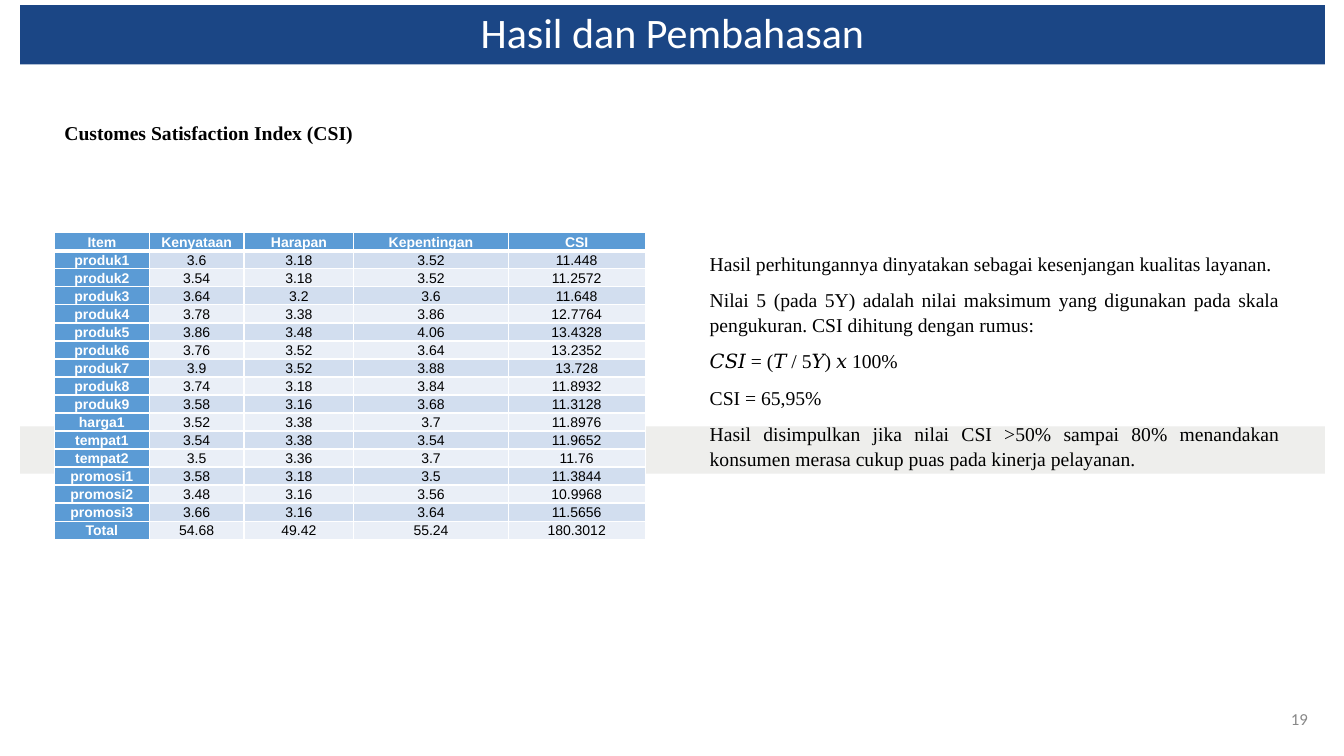
"""Build the slide on the Customer Satisfaction Index results."""
from dataclasses import dataclass

from lxml.etree import SubElement
from pptx import Presentation
from pptx.dml.color import RGBColor
from pptx.enum.shapes import MSO_SHAPE
from pptx.enum.text import MSO_ANCHOR, PP_ALIGN
from pptx.oxml.ns import qn
from pptx.shapes.autoshape import Shape
from pptx.slide import Slide
from pptx.table import _Cell
from pptx.text.text import TextFrame
from pptx.util import Emu, Pt

PX = 9144
WHITE, BLACK, GREY = "FFFFFF", "000000", "888888"
NAVY, PALE_GREY, BLUE = "1B4685", "EEEEEC", "5B9BD5"
BAND_FILLS = ("EAEFF7", "D2DEEF")
SERIF, MATH = "Times New Roman", "Cambria"


@dataclass(frozen=True)
class Box:
    left: int
    top: int
    width: int
    height: int

    def emu(self) -> tuple[Emu, Emu, Emu, Emu]:
        return px(self.left), px(self.top), px(self.width), px(self.height)


@dataclass(frozen=True)
class Run:
    text: str
    font: str = SERIF


@dataclass(frozen=True)
class Band:
    box: Box
    fill: str


@dataclass(frozen=True)
class Column:
    heading: str
    width: int
    values: tuple[str, ...]


TITLE_BAND = Band(Box(20, 5, 1294, 59), NAVY)
LOWER_BAND = Band(Box(20, 423, 1294, 47), PALE_GREY)
PAGE_NUMBER = Box(1250, 693, 57, 40)
SUBHEADING = Box(54, 113, 667, 34)
EXPLANATION = Box(694, 243, 585, 230)
TABLE_LEFT, TABLE_TOP, ROW_HEIGHT = 54, 231, 17

ITEMS = (*(f"produk{n}" for n in range(1, 10)), "harga1", "tempat1", "tempat2",
         *(f"promosi{n}" for n in range(1, 4)), "Total")
COLUMNS = (
    Column("Item", 94, ITEMS),
    Column("Kenyataan", 94, (
        "3.6", "3.54", "3.64", "3.78", "3.86", "3.76", "3.9", "3.74",
        "3.58", "3.52", "3.54", "3.5", "3.58", "3.48", "3.66", "54.68")),
    Column("Harapan", 109, (
        "3.18", "3.18", "3.2", "3.38", "3.48", "3.52", "3.52", "3.18",
        "3.16", "3.38", "3.38", "3.36", "3.18", "3.16", "3.16", "49.42")),
    Column("Kepentingan", 153, (
        "3.52", "3.52", "3.6", "3.86", "4.06", "3.64", "3.88", "3.84",
        "3.68", "3.7", "3.54", "3.7", "3.5", "3.56", "3.64", "55.24")),
    Column("CSI", 136, (
        "11.448", "11.2572", "11.648", "12.7764", "13.4328", "13.2352",
        "13.728", "11.8932", "11.3128", "11.8976", "11.9652", "11.76",
        "11.3844", "10.9968", "11.5656", "180.3012")),
)
PARAGRAPHS = (
    (Run("Hasil perhitungannya dinyatakan sebagai kesenjangan kualitas layanan."),),
    (Run("Nilai 5 (pada 5Y) adalah nilai maksimum yang digunakan pada skala "
         "pengukuran. CSI dihitung dengan rumus:"),),
    (Run("𝐶𝑆𝐼", MATH), Run(" = ("), Run("𝑇", MATH), Run(" / 5"),
     Run("𝑌", MATH), Run(") "), Run("𝑥", MATH), Run(" 100%")),
    (Run("CSI = 65,95%"),),
    (Run("Hasil disimpulkan jika nilai CSI >50% sampai 80% menandakan "
         "konsumen merasa cukup puas pada kinerja pelayanan."),),
)


def px(length: int) -> Emu:
    return Emu(length * PX)


def rgb(code: str) -> RGBColor:
    return RGBColor.from_string(code)


def write(frame: TextFrame, *paragraphs: tuple[Run, ...], size: int,
          color: str = BLACK, bold: bool = False,
          align: PP_ALIGN = PP_ALIGN.JUSTIFY, spacing: float = 1.07,
          after: int = 8) -> None:
    frame.word_wrap = True
    for index, runs in enumerate(paragraphs):
        paragraph = frame.add_paragraph() if index else frame.paragraphs[0]
        paragraph.alignment = align
        paragraph.line_spacing = spacing
        paragraph.space_after = Pt(after)
        for part in runs:
            run = paragraph.add_run()
            run.text = part.text
            run.font.name = part.font
            run.font.size = Pt(size)
            run.font.bold = bold
            run.font.color.rgb = rgb(color)


def add_band(slide: Slide, band: Band) -> Shape:
    bar = slide.shapes.add_shape(MSO_SHAPE.RECTANGLE, *band.box.emu())
    bar.shadow.inherit = False
    bar.fill.solid()
    bar.fill.fore_color.rgb = rgb(band.fill)
    bar.line.fill.background()
    return bar


def add_text_frame(slide: Slide, box: Box) -> TextFrame:
    return slide.shapes.add_textbox(*box.emu()).text_frame


def set_borders(cell: _Cell, bottom: int) -> None:
    properties = cell._tc.get_or_add_tcPr()
    widths = {"a:lnL": 1, "a:lnR": 1, "a:lnT": 1, "a:lnB": bottom}
    for position, (tag, width) in enumerate(widths.items()):
        border = SubElement(properties, qn(tag), w=str(Pt(width)))
        fill = SubElement(border, qn("a:solidFill"))
        SubElement(fill, qn("a:srgbClr"), val=WHITE)
        properties.insert(position, border)


def fill_cell(cell: _Cell, text: str, row: int, column: int) -> None:
    is_heading = row == 0 or column == 0
    cell.fill.solid()
    cell.fill.fore_color.rgb = rgb(BLUE if is_heading else BAND_FILLS[row % 2])
    cell.margin_left = cell.margin_right = px(7)
    cell.margin_top = cell.margin_bottom = px(0)
    cell.vertical_anchor = MSO_ANCHOR.MIDDLE
    write(cell.text_frame, (Run(text, "Arial"),), size=10, bold=is_heading,
          color=WHITE if is_heading else BLACK, align=PP_ALIGN.CENTER)
    set_borders(cell, bottom=3 if row == 0 else 1)


def add_csi_table(slide: Slide) -> None:
    row_count = len(ITEMS) + 1
    box = Box(TABLE_LEFT, TABLE_TOP, sum(column.width for column in COLUMNS),
              row_count * ROW_HEIGHT)
    table = slide.shapes.add_table(row_count, len(COLUMNS), *box.emu()).table
    for row in table.rows:
        row.height = px(ROW_HEIGHT)
    for index, column in enumerate(COLUMNS):
        table.columns[index].width = px(column.width)
        for row, text in enumerate((column.heading, *column.values)):
            fill_cell(table.cell(row, index), text, row, index)


def main() -> None:
    deck = Presentation()
    deck.slide_width, deck.slide_height = px(1333), px(750)
    slide = deck.slides.add_slide(deck.slide_layouts[6])

    page = add_text_frame(slide, PAGE_NUMBER)
    page.vertical_anchor = MSO_ANCHOR.MIDDLE
    write(page, (Run("19", "Calibri"),), size=12, color=GREY,
          align=PP_ALIGN.RIGHT, spacing=1, after=0)

    title = add_band(slide, TITLE_BAND).text_frame
    write(title, (Run("Hasil dan Pembahasan", "Calibri"),), size=30,
          color=WHITE, align=PP_ALIGN.CENTER, spacing=0.9, after=0)
    add_band(slide, LOWER_BAND)
    write(add_text_frame(slide, SUBHEADING),
          (Run("Customes Satisfaction Index (CSI)"),), size=14, bold=True)
    add_csi_table(slide)
    write(add_text_frame(slide, EXPLANATION), *PARAGRAPHS, size=14)
    deck.save("out.pptx")


if __name__ == "__main__":
    main()
